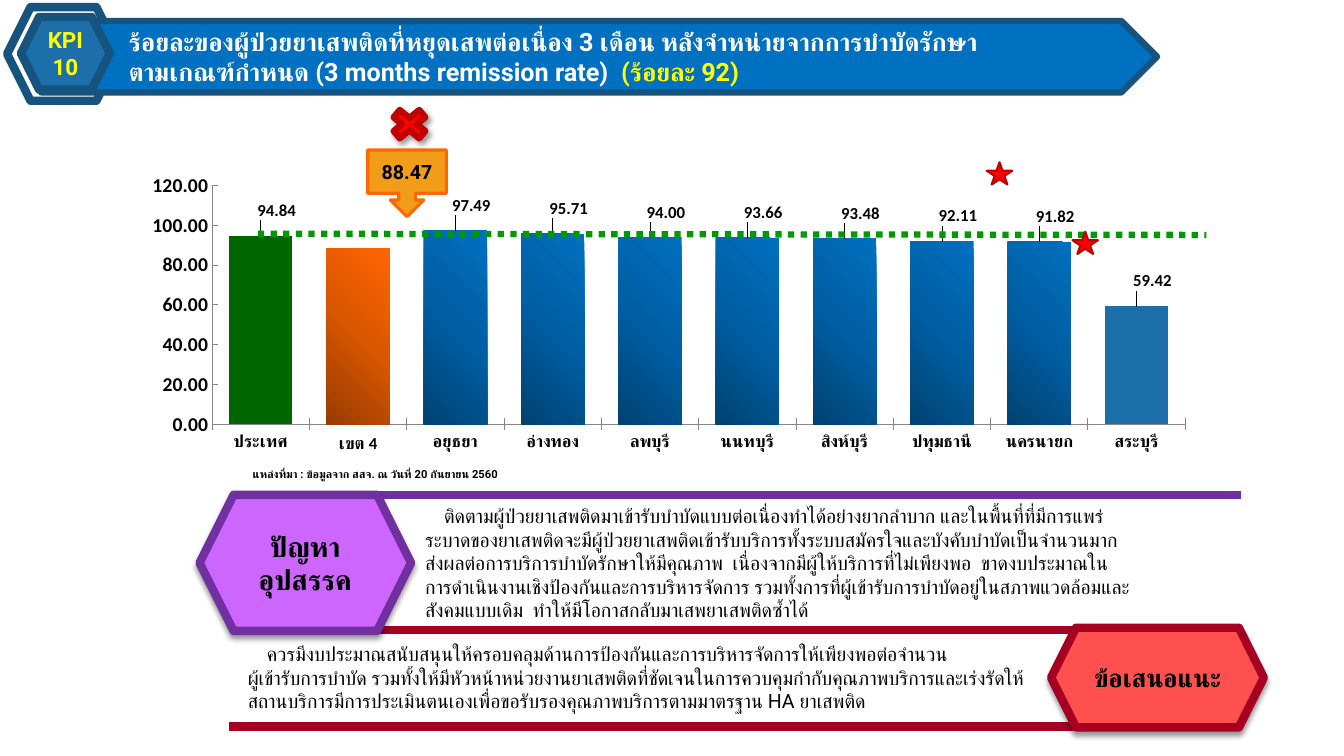
from lxml.etree import SubElement
from pptx import Presentation
from pptx.chart.data import CategoryChartData
from pptx.dml.color import RGBColor
from pptx.enum.chart import XL_CHART_TYPE as ChartType, XL_TICK_MARK as Tick
from pptx.enum.dml import MSO_LINE_DASH_STYLE as Dash
from pptx.enum.shapes import MSO_CONNECTOR as Connector, MSO_SHAPE as Shape
from pptx.enum.text import MSO_ANCHOR as Anchor, MSO_AUTO_SIZE as AutoSize, PP_ALIGN as Align
from pptx.oxml import parse_xml
from pptx.oxml.ns import nsdecls, qn
from pptx.util import Cm, Pt

COLORS = {
    "black": "000000", "white": "FFFFFF", "yellow": "FFFF00", "banner": "0070C0",
    "navy": "16537F", "blue": "1D6FA9", "green": "006600", "target": "009900",
    "amber": "F19D19", "orange": "FF6600", "violet": "CC66FF", "purple": "7030A0",
    "coral": "FF5050", "crimson": "A50021", "red": "FF0000", "dark red": "C00000",
    "axis": "868686",
}
GRADIENTS = {
    "region": ("973C00", "D75600", "FF6600"),
    "province": ("004272", "005EA2", "0070C0"),
}
TITLE = [
    [("ร้อยละของผู้ป่วยยาเสพติดที่หยุดเสพต่อเนื่อง 3 เดือน หลังจำหน่ายจากการบำบัดรักษา", "white")],
    [("ตามเกณฑ์กำหนด (3 months remission rate)  ", "white"), ("(ร้อยละ 92)", "yellow")],
]
PROBLEMS = [
    "ติดตามผู้ป่วยยาเสพติดมาเข้ารับบำบัดแบบต่อเนื่องทำได้อย่างยากลำบาก และในพื้นที่ที่มีการแพร่",
    "ระบาดของยาเสพติดจะมีผู้ป่วยยาเสพติดเข้ารับบริการทั้งระบบสมัครใจและบังคับบำบัดเป็นจำนวนมาก",
    "ส่งผลต่อการบริการบำบัดรักษาให้มีคุณภาพ  เนื่องจากมีผู้ให้บริการที่ไม่เพียงพอ  ขาดงบประมาณใน",
    "การดำเนินงานเชิงป้องกันและการบริหารจัดการ รวมทั้งการที่ผู้เข้ารับการบำบัดอยู่ในสภาพแวดล้อมและ",
    "สังคมแบบเดิม  ทำให้มีโอกาสกลับมาเสพยาเสพติดซ้ำได้",
]
PROPOSALS = [
    "ควรมีงบประมาณสนับสนุนให้ครอบคลุมด้านการป้องกันและการบริหารจัดการให้เพียงพอต่อจำนวน",
    "ผู้เข้ารับการบำบัด รวมทั้งให้มีหัวหน้าหน่วยงานยาเสพติดที่ชัดเจนในการควบคุมกำกับคุณภาพบริการและเร่งรัดให้"
    "สถานบริการมีการประเมินตนเองเพื่อขอรับรองคุณภาพบริการตามมาตรฐาน HA ยาเสพติด",
]
SOURCE = "แหล่งที่มา : ข้อมูลจาก สสจ. ณ วันที่ 20 กันยายน 2560"
RATES = {
    "ประเทศ": 94.84, "เขต 4": 88.47, "อยุธยา": 97.49, "อ่างทอง": 95.71, "ลพบุรี": 94,
    "นนทบุรี": 93.66, "สิงห์บุรี": 93.48, "ปทุมธานี": 92.11, "นครนายก": 91.82, "สระบุรี": 59.42,
}
REGION = 1
PROVINCES = range(2, 9)
RULES = [
    ((9.02, 12.47, 31.27, 12.47), "purple", 6, None),
    ((6.5, 5.89, 30.4, 5.92), "target", 4.5, Dash.ROUND_DOT),
    ((9.27, 15.88, 30.25, 15.88), "crimson", 6, None),
    ((5.77, 18.31, 27.69, 18.31), "crimson", 6, None),
]
SHAPES = [
    (Shape.HEXAGON, (0.18, 0.18, 2.84, 2.36), None, "navy", 6, None, [], 0, "black"),
    (Shape.PENTAGON, (1.04, 0.53, 28.12, 1.8), "banner", "navy", 4.5, None, [], 0, "black"),
    (Shape.HEXAGON, (0.53, 0.43, 2.24, 1.83), "blue", "navy", 6, None, ["KPI", "10"], 16, "yellow"),
    (Shape.DOWN_ARROW_CALLOUT, (9.27, 3.78, 1.98, 1.68), "amber", "orange", 2.25, None, ["88.47"], 14, "black"),
    (Shape.HEXAGON, (5.03, 12.47, 5.33, 3.43), "violet", "purple", 6, 90, ["ปัญหาอุปสรรค"], 20, "black"),
    (Shape.HEXAGON, (26.49, 15.82, 5.36, 2.51), "coral", "crimson", 6, 90, ["ข้อเสนอแนะ"], 18, "black"),
    (Shape.STAR_5_POINT, (27.03, 5.84, 0.64, 0.56), "red", "dark red", 1.5, None, [], 0, "black"),
    (Shape.STAR_5_POINT, (24.87, 4.09, 0.64, 0.56), "red", "dark red", 1.5, None, [], 0, "black"),
    (Shape.MATH_MULTIPLY, (9.7, 2.62, 1.24, 1.02), "red", "dark red", 4.5, 45, [], 0, "black"),
]


def color(name):
    return RGBColor.from_string(COLORS[name])


def centimetres(values):
    return [Cm(value) for value in values]


def set_values(target, values):
    for name, value in values.items():
        setattr(target, name, value)


def place(shape, box):
    set_values(shape, dict(zip(("left", "top", "width", "height"), centimetres(box))))


def write(shape, lines, size, bold=True, align=Align.LEFT, indent=0, **frame_format):
    frame = shape.text_frame
    set_values(frame, {"word_wrap": True, "auto_size": AutoSize.NONE, **frame_format})
    for number, line in enumerate(lines):
        paragraph = frame.paragraphs[0] if number == 0 else frame.add_paragraph()
        properties = paragraph._p.get_or_add_pPr()
        properties.set("marL", "0")
        properties.set("indent", str(Cm(indent) if number == 0 else 0))
        SubElement(properties, qn("a:buNone"))
        set_values(paragraph, {"alignment": align, "space_before": Pt(0)})
        for text, tint in line:
            run = paragraph.add_run()
            run.text = text
            set_values(run.font, {"size": Pt(size), "bold": bold, "name": "Roboto"})
            run.font.color.rgb = color(tint)


def add_shadow(shape, angle):
    shape.element.spPr.append(parse_xml(
        f'<a:effectLst {nsdecls("a")}><a:outerShdw blurRad="{Pt(4)}" dist="{Pt(3)}" dir="{angle * 60000}">'
        '<a:srgbClr val="000000"><a:alpha val="40000"/></a:srgbClr></a:outerShdw></a:effectLst>'))


def add_rule(slide, ends, tint, width, dash):
    rule = slide.shapes.add_connector(Connector.STRAIGHT, *centimetres(ends))
    rule.line.color.rgb = color(tint)
    rule.line.width = Pt(width)
    if dash:
        rule.line.dash_style = dash
    SubElement(rule.element.spPr, qn("a:effectLst"))


def add_figure(slide, kind, box, fill, outline, width, shadow, lines, size, tint):
    shape = slide.shapes.add_shape(kind, *centimetres(box))
    if fill:
        shape.fill.solid()
        shape.fill.fore_color.rgb = color(fill)
    else:
        shape.fill.background()
    shape.line.color.rgb = color(outline)
    shape.line.width = Pt(width)
    if shadow is None:
        shape.shadow.inherit = False
    else:
        add_shadow(shape, shadow)
    if lines:
        margins = {"margin_left": 0, "margin_right": 0} if len(lines) > 1 else {}
        write(shape, [[(line, tint)] for line in lines], size, align=Align.CENTER,
              vertical_anchor=Anchor.MIDDLE, **margins)


def gradient(stops):
    marks = "".join(f'<a:gs pos="{number * 50000}"><a:srgbClr val="{stop}"/></a:gs>'
                    for number, stop in enumerate(stops))
    return parse_xml(f'<a:gradFill {nsdecls("a")}><a:gsLst>{marks}</a:gsLst><a:path path="circle">'
                     '<a:fillToRect t="100000" r="100000"/></a:path></a:gradFill>')


def rate_label(number):
    if number == REGION:
        content = '<c:delete val="1"/>'
    else:
        flags = "".join(f'<c:show{name} val="{int(name == "Val")}"/>' for name in
                        ("LegendKey", "Val", "CatName", "SerName", "Percent", "BubbleSize"))
        content = ('<c:layout><c:manualLayout><c:x val="0.015"/><c:y val="-0.035"/></c:manualLayout></c:layout>'
                   '<c:numFmt formatCode="0.00" sourceLinked="0"/><c:spPr/>'
                   '<c:txPr><a:bodyPr/><a:p><a:pPr><a:defRPr sz="1200" b="1"/></a:pPr></a:p></c:txPr>'
                   '<c:dLblPos val="outEnd"/>' + flags)
    return parse_xml(f'<c:dLbl {nsdecls("c", "a")}><c:idx val="{number}"/>{content}</c:dLbl>')


def add_rate_chart(slide):
    data = CategoryChartData(number_format="0.00")
    data.categories = list(RATES)
    data.add_series("Series 1", list(RATES.values()))
    box = centimetres((3.33, 4.27, 26.57, 7.98))
    chart = slide.shapes.add_chart(ChartType.COLUMN_CLUSTERED, *box, data).chart
    set_values(chart, {"has_legend": False, "has_title": False})
    set_values(chart.font, {"name": "Calibri", "size": Pt(18)})
    chart.font.color.rgb = color("black")
    set_values(chart.value_axis, {"minimum_scale": 0, "maximum_scale": 120, "major_unit": 20,
                                  "has_major_gridlines": False})
    set_values(chart.value_axis.tick_labels, {"number_format": "0.00", "number_format_is_linked": False})
    for axis, size, tick in ((chart.category_axis, 12, Tick.CROSS), (chart.value_axis, 14, Tick.INSIDE)):
        axis.major_tick_mark = tick
        axis.format.line.color.rgb = color("axis")
        set_values(axis.tick_labels.font, {"size": Pt(size), "bold": True, "name": "Calibri"})

    plot = chart.plots[0]
    set_values(plot, {"gap_width": 54, "vary_by_categories": False})
    series = plot.series[0]
    series.format.fill.solid()
    series.format.fill.fore_color.rgb = color("blue")
    series.points[0].format.fill.solid()
    series.points[0].format.fill.fore_color.rgb = color("green")
    for number in (REGION, *PROVINCES):
        series.points[number].format.fill.solid()
        properties = chart.element.xpath(f'.//c:dPt[c:idx/@val="{number}"]/c:spPr')[0]
        stops = GRADIENTS["region" if number == REGION else "province"]
        properties.replace(properties[0], gradient(stops))

    labels = series.data_labels
    set_values(labels, {"show_value": True, "number_format": "0.00", "number_format_is_linked": False})
    set_values(labels.font, {"size": Pt(12), "bold": True})
    label_list = chart.element.xpath(".//c:ser/c:dLbls")[0]
    for number in range(len(RATES)):
        label_list.insert(number, rate_label(number))

    plot_area = chart.element.xpath(".//c:plotArea")[0]
    for layout in plot_area.xpath("c:layout"):
        plot_area.remove(layout)
    sizes = "".join(f'<c:{name} val="{value}"/>' for name, value in
                    (("x", 0.076), ("y", 0.051), ("w", 0.923), ("h", 0.754)))
    plot_area.insert(0, parse_xml(
        f'<c:layout {nsdecls("c")}><c:manualLayout><c:layoutTarget val="inner"/>'
        f'<c:xMode val="edge"/><c:yMode val="edge"/>{sizes}</c:manualLayout></c:layout>'))


def main():
    presentation = Presentation()
    set_values(presentation, {"slide_width": Cm(33.87), "slide_height": Cm(19.05)})
    slide = presentation.slides.add_slide(presentation.slide_layouts[3])
    title, problems, proposals = slide.placeholders
    add_rate_chart(slide)
    for rule in RULES:
        add_rule(slide, *rule)
    for figure in SHAPES:
        add_figure(slide, *figure)

    place(title, (3.25, 0.53, 25, 1.8))
    write(title, TITLE, 18, margin_left=0, vertical_anchor=Anchor.MIDDLE)
    slide.shapes.element.append(title.element)
    for body, lines, box in ((problems, PROBLEMS, (10.46, 12.57, 20.93, 3.25)),
                             (proposals, PROPOSALS, (5.99, 16.05, 20.65, 2.06))):
        place(body, box)
        write(body, [[(line, "black")] for line in lines], 14, bold=False, indent=0.48)
    source = slide.shapes.add_textbox(*centimetres((6.12, 11.66, 7.52, 0.61)))
    write(source, [[(SOURCE, "black")]], 8, word_wrap=False)

    for properties in slide.element.iter(qn("a:rPr")):
        SubElement(properties, qn("a:cs")).set("typeface", "Roboto")
    presentation.save("out.pptx")


if __name__ == "__main__":
    main()
